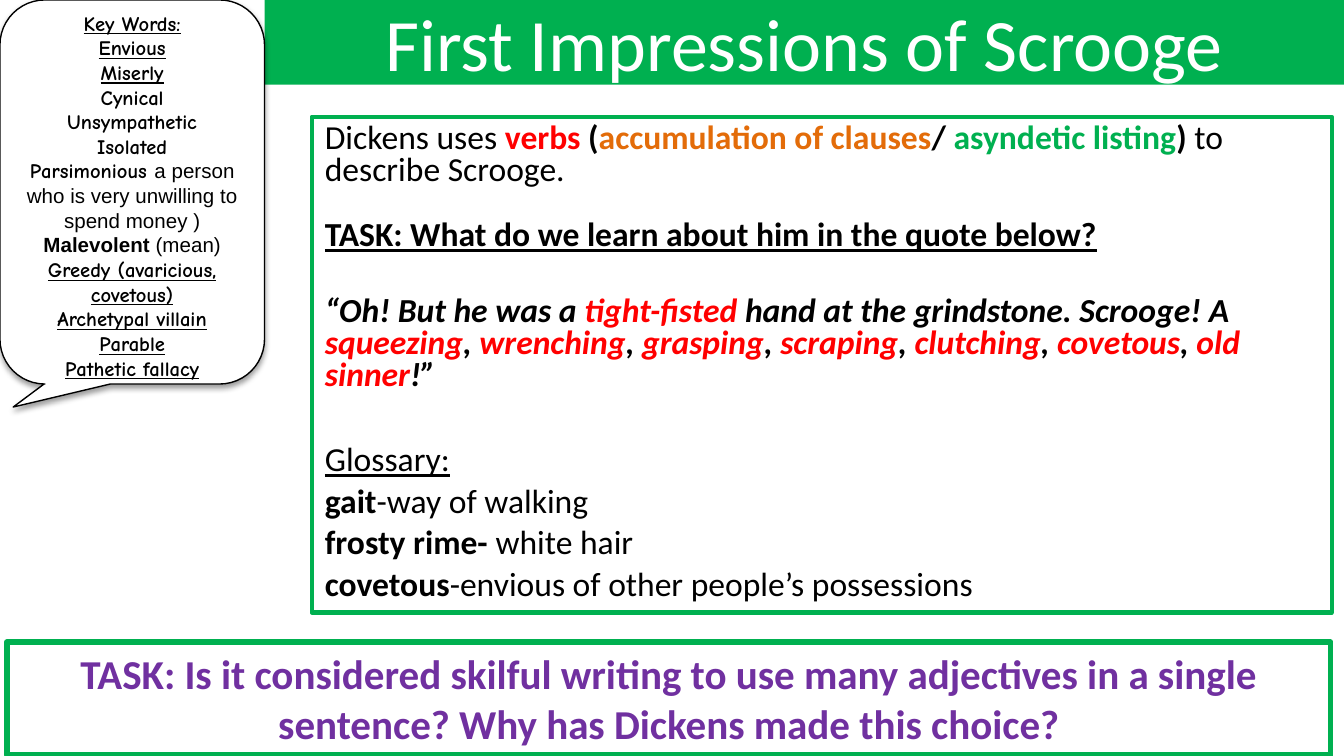
"""Build the slide on first impressions of Scrooge."""
from dataclasses import dataclass

from lxml import etree
from pptx import Presentation
from pptx.dml.color import RGBColor
from pptx.enum.shapes import MSO_SHAPE
from pptx.enum.text import MSO_ANCHOR, MSO_AUTO_SIZE, PP_ALIGN
from pptx.oxml.ns import qn
from pptx.util import Cm, Pt

RECT = MSO_SHAPE.RECTANGLE
BUBBLE = MSO_SHAPE.ROUNDED_RECTANGULAR_CALLOUT
TOP, MIDDLE = MSO_ANCHOR.TOP, MSO_ANCHOR.MIDDLE
LEFT, CENTER = PP_ALIGN.LEFT, PP_ALIGN.CENTER
FIXED = MSO_AUTO_SIZE.NONE
TITLE_ONLY = 5

HEX = {
    "white": "FFFFFF", "black": "000000", "green": "00B050",
    "red": "FF0000", "orange": "E36C09", "purple": "7030A0",
}


@dataclass
class Span:
    """A run of text with what sets it apart from its paragraph."""
    text: str
    color: str | None = None
    bold: bool | None = None
    font: str | None = None


@dataclass
class Para:
    """A paragraph with its shared format."""
    spans: list[Span]
    bold: bool = False
    italic: bool = False
    under: bool = False
    before: float = 0


@dataclass
class Style:
    """The text format of a whole box."""
    size: float
    color: str = "black"
    font: str = "Calibri"
    align: PP_ALIGN = CENTER
    lines: float = 1.0


@dataclass
class Box:
    """A place on the slide in centimetres."""
    left: float
    top: float
    width: float
    height: float


def rgb(name: str) -> RGBColor:
    """Look up a colour."""
    return RGBColor.from_string(HEX[name])


def write(frame, paras: list[Para], style: Style) -> None:
    """Fill a text frame with paragraphs."""
    frame.word_wrap = True
    frame.auto_size = FIXED
    for i, para in enumerate(paras):
        line = frame.add_paragraph() if i else frame.paragraphs[0]
        line.alignment = style.align
        line.line_spacing = style.lines
        line.space_before = Pt(para.before)
        font = line.font
        font.name, font.size = style.font, Pt(style.size)
        font.color.rgb = rgb(style.color)
        font.bold, font.italic = para.bold, para.italic
        font.underline = para.under
        for span in para.spans:
            run = line.add_run()
            run.text = span.text
            if span.color:
                run.font.color.rgb = rgb(span.color)
            if span.bold is not None:
                run.font.bold = span.bold
            if span.font:
                run.font.name = span.font


def draw(slide, kind: MSO_SHAPE, box: Box, edge: str, weight: float, anchor: MSO_ANCHOR):
    """Add a white shape with a coloured edge."""
    shape = slide.shapes.add_shape(
        kind, Cm(box.left), Cm(box.top), Cm(box.width), Cm(box.height))
    shape.shadow.inherit = False
    shape.fill.solid()
    shape.fill.fore_color.rgb = rgb("white")
    shape.line.color.rgb = rgb(edge)
    shape.line.width = Pt(weight)
    shape.text_frame.vertical_anchor = anchor
    return shape


def shade(shape) -> None:
    """Give a shape a soft shadow below it."""
    effects = shape._element.spPr.find(qn("a:effectLst"))
    outer = etree.SubElement(
        effects, qn("a:outerShdw"), blurRad=str(Pt(3.1)), dist=str(Pt(1.6)),
        dir="5400000", rotWithShape="0")
    tint = etree.SubElement(outer, qn("a:srgbClr"), val=HEX["black"])
    etree.SubElement(tint, qn("a:alpha"), val="38000")


def head(slide) -> None:
    """Set the title on its green band."""
    title = slide.shapes.title
    title.left, title.top, title.width, title.height = Cm(5), Cm(0), Cm(20.4), Cm(1.6)
    title.fill.solid()
    title.fill.fore_color.rgb = rgb("green")
    title.text_frame.vertical_anchor = MIDDLE
    write(title.text_frame, [Para([Span("First Impressions of Scrooge")])],
          Style(39.6, "white"))


def quote() -> list[Span]:
    """Mark the telling words of the quote in red."""
    verbs = ["squeezing", "wrenching", "grasping", "scraping",
             "clutching", "covetous", "old sinner"]
    spans = [Span("“Oh! But he was a "), Span("tight-fisted", "red"),
             Span(" hand at the grindstone. Scrooge! A ")]
    for verb in verbs:
        spans += [Span(verb, "red"), Span("!”" if verb == verbs[-1] else ", ")]
    return spans


def body(slide) -> None:
    """Draw the main box with quote and glossary."""
    terms = [("gait", "-way of walking"), ("frosty rime- ", "white hair"),
             ("covetous", "-envious of other people’s possessions")]
    intro = [
        Span("Dickens uses "), Span("verbs ", "red", True), Span("(", bold=True),
        Span("accumulation of clauses", "orange", True), Span("/ ", bold=True),
        Span("asyndetic listing", "green", True), Span(")", bold=True),
        Span(" to describe Scrooge."),
    ]
    ask = [Span("TASK: What do we learn about him in the quote below?")]
    paras = [
        Para(intro),
        Para(ask, bold=True, under=True, before=17.6),
        Para(quote(), bold=True, italic=True, before=23.2),
        Para([Span("Glossary:")], under=True, before=28.2),
    ]
    paras += [Para([Span(term, bold=True), Span(sense)], before=5)
              for term, sense in terms]
    shape = draw(slide, RECT, Box(5.89, 2.21, 19.28, 9.37), "green", 2.25, TOP)
    write(shape.text_frame, paras, Style(18, align=LEFT, lines=0.8))


def task(slide) -> None:
    """Draw the closing task."""
    text = ("TASK: Is it considered skilful writing to use many adjectives in a "
            "single sentence? Why has Dickens made this choice?")
    shape = draw(slide, RECT, Box(0.13, 12.14, 25.02, 2.13), "green", 3, TOP)
    write(shape.text_frame, [Para([Span(text)], bold=True)], Style(22, "purple"))


def listed(names: list[str], under: bool) -> list[Para]:
    """Make one bold paragraph of each name."""
    return [Para([Span(name)], bold=True, under=under) for name in names]


def words(slide) -> None:
    """Draw the callout of key words."""
    paras = listed(["Key Words:", "Envious", "Miserly"], True)
    paras += listed(["Cynical", "Unsympathetic", "Isolated"], False)
    paras += [
        Para([Span("Parsimonious ", bold=True),
              Span("a person who is very unwilling to spend money )", font="Arial")]),
        Para([Span("Malevolent ", bold=True, font="Arial"),
              Span("(mean)", font="Arial")]),
    ]
    paras += listed(["Greedy (avaricious, covetous)", "Archetypal villain",
                     "Parable", "Pathetic fallacy"], True)
    shape = draw(slide, BUBBLE, Box(0, 0, 5, 7.26), "black", 0.75, MIDDLE)
    for i, value in enumerate((-0.45, 0.56, 0.17)):
        shape.adjustments[i] = value
    shade(shape)
    frame = shape.text_frame
    frame.margin_top, frame.margin_bottom = Cm(0.13), Cm(0)
    write(frame, paras, Style(11, font="Comic Neue"))


def main() -> None:
    """Build and save the deck."""
    deck = Presentation()
    deck.slide_width, deck.slide_height = Cm(25.4), Cm(14.29)
    slide = deck.slides.add_slide(deck.slide_layouts[TITLE_ONLY])
    for add in (head, body, task, words):
        add(slide)
    deck.save("out.pptx")


if __name__ == "__main__":
    main()
